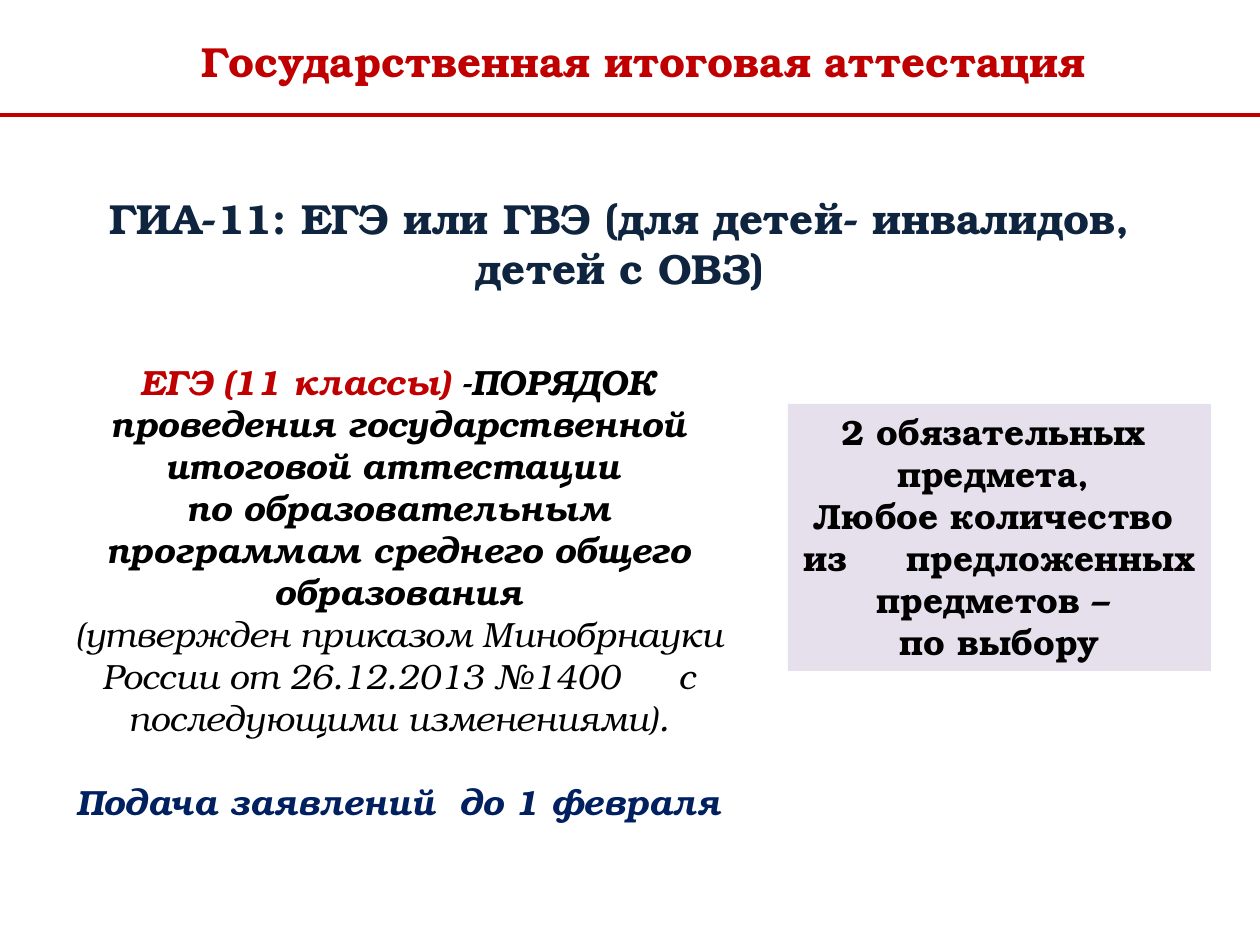
import pptx
import pptx.util
import pptx.dml.color
import pptx.enum.shapes
import pptx.enum.text
import pptx.oxml.ns
import lxml.etree

SCALE = 914400 / 126
FONT = "TeX Gyre Bonum"
HUES = {"red": "C00000", "navy": "002060", "dark": "0F243E",
        "black": "000000", "lilac": "E6E0EC"}

# Styles: size, hue, bold, italic, and extra tracking in points for wide gaps
HEAD = {"size": 24, "hue": "red", "bold": True}
TOPIC = {**HEAD, "hue": "dark"}
NOTE = {"size": 20, "hue": "black", "bold": True}
RULE = {**NOTE, "italic": True}
EXAM = {**RULE, "hue": "red"}
ORDER = {**RULE, "bold": False}
DATE = {**RULE, "hue": "navy"}

# Content: box in px, fill, paragraphs as (space before, runs); "\n" breaks a line
BOXES = [
    ((78, 29, 1131, 59), None,
     [(0, [("Государственная итоговая аттестация", HEAD)])]),
    ((49, 354, 699, 538), None, [
        (0, [("ЕГЭ (11 классы) ", EXAM),
             ("-ПОРЯДОК\nпроведения государственной итоговой аттестации \n"
              "по образовательным программам среднего общего образования", RULE)]),
        (0, [("(утвержден приказом Минобрнауки России от 26.12.2013 №1400", ORDER),
             (" ", {**ORDER, "track": 27}),
             ("с последующими изменениями).", ORDER)]),
        (24, [("Подача заявлений", DATE), (" ", {**DATE, "track": 7}),
              ("до 1 февраля", DATE)]),
    ]),
    ((788, 404, 423, 267), "lilac", [
        (0, [("2 обязательных ", NOTE)]),
        (0, [("предмета, ", NOTE)]),
        (0, [("Любое количество ", NOTE)]),
        (0, [("из", NOTE), (" ", {**NOTE, "track": 27}),
             ("предложенных предметов – ", NOTE)]),
        (0, [("по выбору", NOTE)]),
    ]),
    ((29, 186, 1182, 115), None,
     [(0, [("ГИА-11: ЕГЭ или ГВЭ (для детей- инвалидов, детей с ОВЗ)", TOPIC)])]),
]
LINE = (0, 115, 1260, 115)


def px(n):
    return pptx.util.Emu(round(n * SCALE))


def tint(name):
    return pptx.dml.color.RGBColor.from_string(HUES[name])


def add_run(para, text, style):
    run = para.add_run()
    run.text = text
    font = run.font
    look = {"name": FONT, "size": pptx.util.Pt(style["size"]),
            "bold": style["bold"], "italic": style.get("italic", False)}
    for key, val in look.items():
        setattr(font, key, val)
    font.color.rgb = tint(style["hue"])
    if "track" in style:
        run._r.get_or_add_rPr().set("spc", str(style["track"] * 100))


def add_box(slide, box, fill, paras):
    place = [px(n) for n in box]
    if fill:
        shape = slide.shapes.add_shape(
            pptx.enum.shapes.MSO_SHAPE.RECTANGLE, *place)
        shape.shadow.inherit = False
        shape.fill.solid()
        shape.fill.fore_color.rgb = tint(fill)
        shape.line.fill.background()
    else:
        shape = slide.shapes.add_textbox(*place)
    frame = shape.text_frame
    frame.word_wrap = True
    frame.vertical_anchor = pptx.enum.text.MSO_ANCHOR.TOP
    for i, (gap, runs) in enumerate(paras):
        para = frame.add_paragraph() if i else frame.paragraphs[0]
        para.alignment = pptx.enum.text.PP_ALIGN.CENTER
        if gap:
            para.space_before = pptx.util.Pt(gap)
        for text, style in runs:
            for j, part in enumerate(text.split("\n")):
                if j:
                    para.add_line_break()
                add_run(para, part, style)


def main():
    deck = pptx.Presentation()
    deck.slide_width, deck.slide_height = px(1260), px(945)
    slide = deck.slides.add_slide(deck.slide_layouts[6])

    # Rule under the title
    rule = slide.shapes.add_connector(
        pptx.enum.shapes.MSO_CONNECTOR.STRAIGHT, *[px(n) for n in LINE])
    rule.line.color.rgb = tint("red")
    rule.line.width = pptx.util.Pt(2)
    lxml.etree.SubElement(rule._element.spPr, pptx.oxml.ns.qn("a:effectLst"))

    # Text blocks
    for box in BOXES:
        add_box(slide, *box)
    deck.save("out.pptx")


if __name__ == "__main__":
    main()
